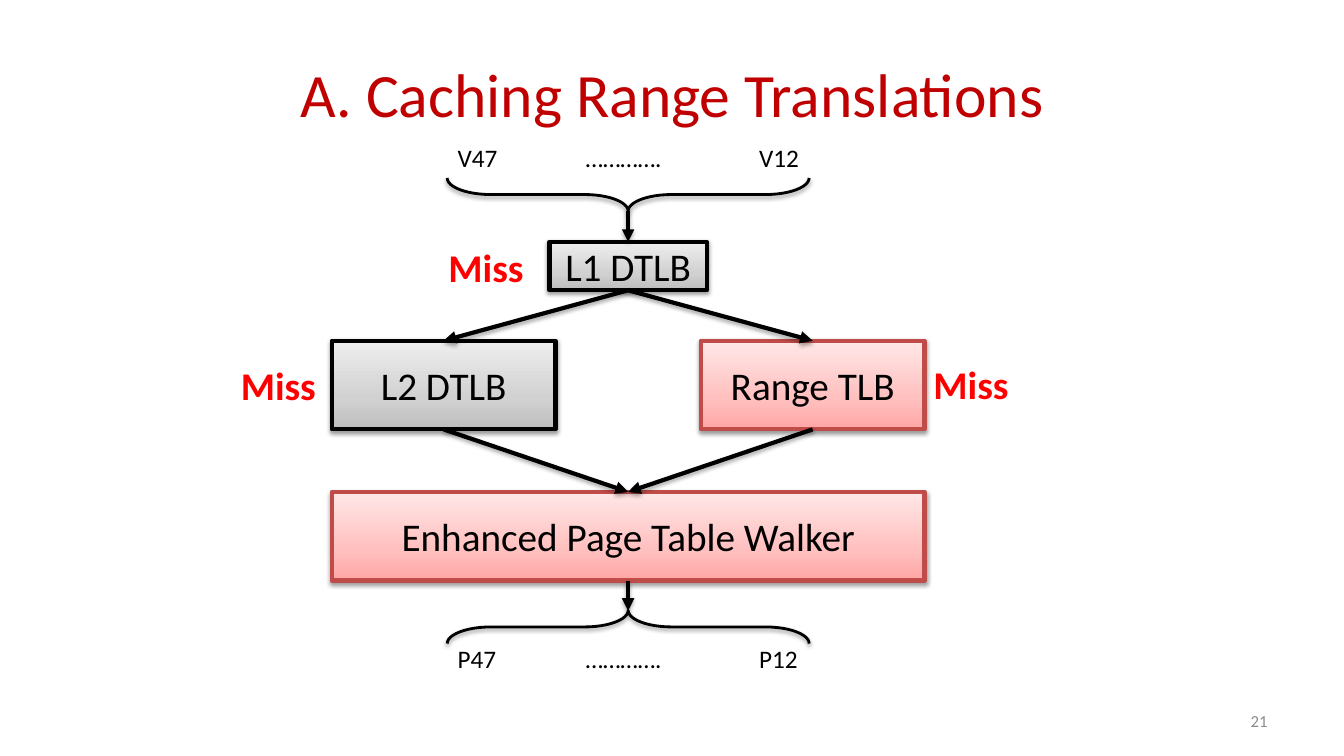
import pptx
import pptx.util
import pptx.dml.color
import pptx.enum.shapes
import pptx.enum.text
import pptx.oxml
import pptx.oxml.ns

RGBColor = pptx.dml.color.RGBColor
MSO_SHAPE = pptx.enum.shapes.MSO_SHAPE
ALIGN = pptx.enum.text.PP_ALIGN
ANCHOR = pptx.enum.text.MSO_ANCHOR
Inches, Pt = pptx.util.Inches, pptx.util.Pt

BLACK = RGBColor(0x00, 0x00, 0x00)
RED = RGBColor(0xFF, 0x00, 0x00)
TITLE_RED = RGBColor(0xC0, 0x00, 0x00)
NUMBER_GRAY = RGBColor(0x8C, 0x8C, 0x8C)
BORDER_RED = RGBColor(0xBF, 0x4C, 0x48)
GRAY_STOPS = [(0, RGBColor(0xBD, 0xBD, 0xBD)), (35, RGBColor(0xD1, 0xD1, 0xD1)),
              (100, RGBColor(0xEE, 0xEE, 0xEE))]
PINK_STOPS = [(0, RGBColor(0xFF, 0xA6, 0xA5)), (35, RGBColor(0xFF, 0xC0, 0xBF)),
              (100, RGBColor(0xFF, 0xE7, 0xE7))]
EXISTING, ADDED = (GRAY_STOPS, BLACK), (PINK_STOPS, BORDER_RED)

# Content
TITLE = "A. Caching Range Translations"
PAGE_NUMBER = "21"
WIDTH, HEIGHT = 13.33, 7.5
CENTER = 6.23            # axis of the diagram
LEFT, RIGHT = 3.29, 9.17  # outer edges of the diagram
UNIT = 2.22              # width of a second-level box
TALL = 0.88              # height of a second-level box
BLOCKS = {  # name: (left, top, width, height, style)
    "L1 DTLB": (CENTER - 0.78, 2.4, 1.56, 0.48, EXISTING),
    "Range TLB": (RIGHT - UNIT, 3.38, UNIT, TALL, ADDED),
    "Enhanced Page Table Walker": (LEFT, 4.88, RIGHT - LEFT, TALL, ADDED),
    "L2 DTLB": (LEFT, 3.38, UNIT, TALL, EXISTING),
}
LINKS = [("L1 DTLB", "L2 DTLB"), ("L1 DTLB", "Range TLB"),
         ("L2 DTLB", "Enhanced Page Table Walker"),
         ("Range TLB", "Enhanced Page Table Walker")]
ADDRESSES = [  # text, text top, brace middle, brace rotation
    ("V47\t………….\tV12", 1.36, 1.93, 270),
    ("P47\t………….\tP12", 6.33, 6.22, 90),
]
ADDRESS_TABS = (1.27, 2.99)
BRACE_DEPTH, BRACE_SPAN = 0.33, 3.59
MISSES = [(4.35, 2.36), (2.29, 3.54), (9.16, 3.53)]

deck = pptx.Presentation()
deck.slide_width, deck.slide_height = Inches(WIDTH), Inches(HEIGHT)
page = deck.slides.add_slide(deck.slide_layouts[6])


def element(xml):
    namespace = pptx.oxml.ns.nsdecls("a")
    return pptx.oxml.parse_xml(xml.replace(" ", f" {namespace} ", 1))


def write(box, text, size=28, color=BLACK, bold=False, align=ALIGN.LEFT, anchor=ANCHOR.TOP):
    frame = box.text_frame
    frame.word_wrap = True
    frame.vertical_anchor = anchor
    para = frame.paragraphs[0]
    para.alignment = align
    span = para.add_run()
    span.text = text
    span.font.name, span.font.size = "Calibri", Pt(size)
    span.font.color.rgb, span.font.bold = color, bold
    return para


def text_box(left, top, width, height, text, **style):
    box = page.shapes.add_textbox(*map(Inches, (left, top, width, height)))
    return write(box, text, **style)


def add_shadow(shape, alpha, distance):
    properties = shape._element.spPr
    for effects in properties.findall(pptx.oxml.ns.qn("a:effectLst")):
        properties.remove(effects)
    properties.append(element(
        f'<a:effectLst ><a:outerShdw blurRad="40000" dist="{distance}" dir="5400000" '
        f'rotWithShape="0"><a:srgbClr val="000000"><a:alpha val="{alpha * 1000}"/>'
        '</a:srgbClr></a:outerShdw></a:effectLst>'))


def outline(shape, color, width):
    shape.line.color.rgb, shape.line.width = color, Pt(width)


def gradient(shape, stops):
    shape.fill.gradient()
    shape.fill.gradient_angle = 90
    stop_list = shape._element.spPr.find(".//" + pptx.oxml.ns.qn("a:gsLst"))
    for stop in list(stop_list):
        stop_list.remove(stop)
    for place, color in stops:
        stop_list.append(element(
            f'<a:gs pos="{place * 1000}"><a:srgbClr val="{color}"/></a:gs>'))


def arrow(start, end):
    line = page.shapes.add_connector(pptx.enum.shapes.MSO_CONNECTOR.STRAIGHT,
                                     *map(Inches, (*start, *end)))
    outline(line, BLACK, 3)
    line.line._ln.append(element('<a:tailEnd type="triangle"/>'))
    add_shadow(line, 35, 23000)


def top_of(name):
    left, top, width, height, style = BLOCKS[name]
    return left + width / 2, top


def bottom_of(name):
    middle, top = top_of(name)
    return middle, top + BLOCKS[name][3]


# Title and page number
text_box(0.67, 0.3, WIDTH - 1.33, 1.25, TITLE, size=44, color=TITLE_RED,
         align=ALIGN.CENTER, anchor=ANCHOR.MIDDLE)
text_box(9.56, 6.95, 3.11, 0.4, PAGE_NUMBER, size=12, color=NUMBER_GRAY,
         align=ALIGN.RIGHT, anchor=ANCHOR.MIDDLE)

# Address bits with their braces
for text, top, middle, rotation in ADDRESSES:
    para = text_box(4.44, top, 3.71, 0.4, text, size=18)
    tabs = "".join(f'<a:tab pos="{Inches(stop)}" algn="l"/>' for stop in ADDRESS_TABS)
    para._p.get_or_add_pPr().append(element(f"<a:tabLst >{tabs}</a:tabLst>"))
    brace = page.shapes.add_shape(
        MSO_SHAPE.LEFT_BRACE, Inches(CENTER - BRACE_DEPTH / 2),
        Inches(middle - BRACE_SPAN / 2), Inches(BRACE_DEPTH), Inches(BRACE_SPAN))
    brace.rotation = rotation
    brace.adjustments[0], brace.adjustments[1] = 1.31, 0.5
    brace.fill.background()
    outline(brace, BLACK, 2)
    add_shadow(brace, 38, 20000)

# Blocks
for name, (left, top, width, height, (stops, border)) in BLOCKS.items():
    block = page.shapes.add_shape(MSO_SHAPE.RECTANGLE,
                                  *map(Inches, (left, top, width, height)))
    gradient(block, stops)
    outline(block, border, 3)
    add_shadow(block, 38, 20000)
    write(block, name, align=ALIGN.CENTER, anchor=ANCHOR.MIDDLE)

# Arrows between blocks, and to and from the braces
for source, target in LINKS:
    arrow(bottom_of(source), top_of(target))
arrow((CENTER, 2.09), top_of("L1 DTLB"))
arrow(bottom_of("Enhanced Page Table Walker"), (CENTER, 6.06))

# Miss labels
for left, top in MISSES:
    text_box(left, top, 1, 0.57, "Miss", color=RED, bold=True)

deck.save("out.pptx")
